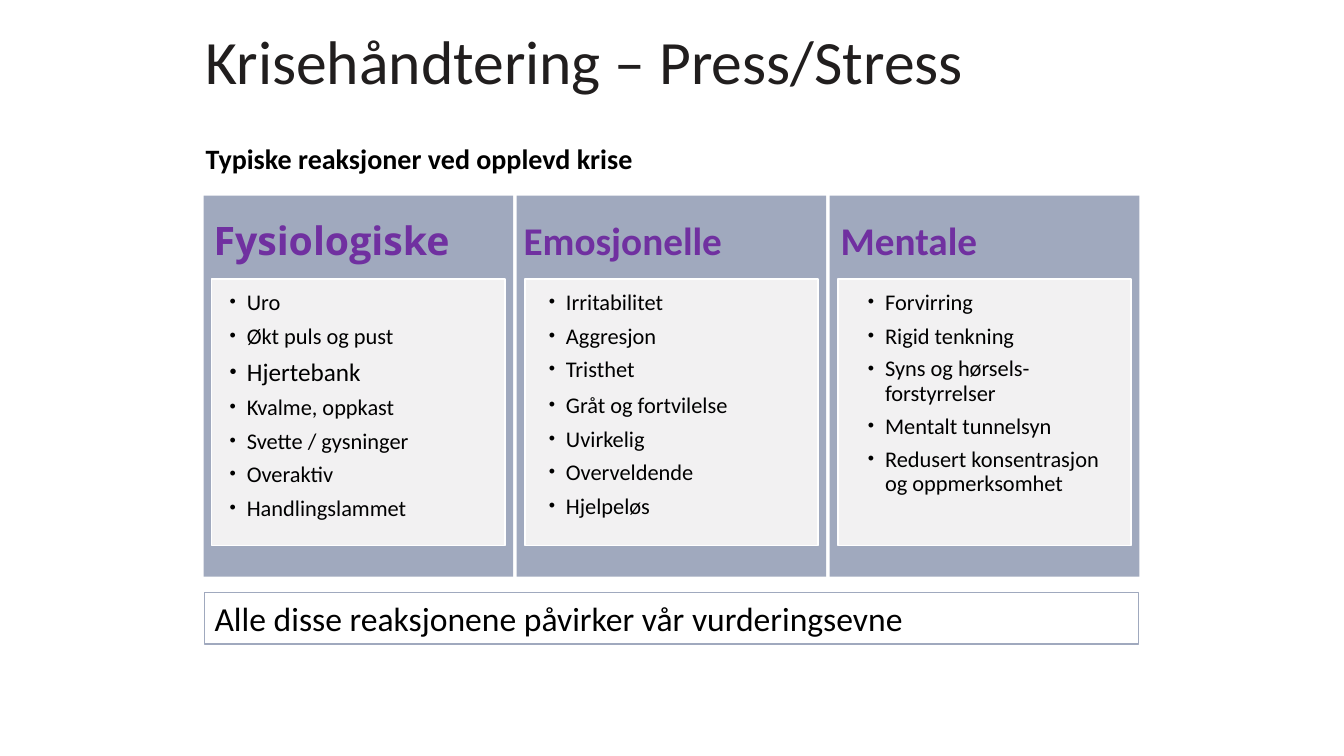
from lxml import etree
from pptx import Presentation
from pptx.dml.color import RGBColor
from pptx.enum.shapes import MSO_SHAPE
from pptx.enum.text import MSO_ANCHOR, PP_ALIGN
from pptx.oxml.ns import qn
from pptx.util import Inches, Pt

RECTANGLE = MSO_SHAPE.RECTANGLE
TOP, MIDDLE = MSO_ANCHOR.TOP, MSO_ANCHOR.MIDDLE
LEFT = PP_ALIGN.LEFT

COLORS = {
    "title": "211E1E",
    "text": "000000",
    "heading": "7030A0",
    "panel": "A0A9BE",
    "card": "F2F1F2",
    "white": "FFFFFF",
}
BODY_FONT = "Calibri"
COLUMNS_LEFT, COLUMNS_TOP = 2.02, 1.94
COLUMN_WIDTH, COLUMN_HEIGHT, COLUMN_PITCH = 3.07, 3.78, 3.105

REACTIONS = [
    {
        "heading": "Fysiologiske", "font": "Open Sans",
        "heading_shift": 0, "list_shift": 0.16, "list_width": 2.81,
        "items": [("Uro", 16, 0, 1), ("Økt puls og pust", 16, 0.3, 1),
                  ("Hjertebank", 18, 0.3, 1), ("Kvalme, oppkast", 16, 0.3, 1),
                  ("Svette / gysninger", 16, 0.3, 1), ("Overaktiv", 16, 0.3, 1),
                  ("Handlingslammet", 16, 0.3, 1)],
    },
    {
        "heading": "Emosjonelle", "font": BODY_FONT,
        "heading_shift": -0.03, "list_shift": 0.22, "list_width": 2.75,
        "items": [("Irritabilitet", 16, 0, 1), ("Aggresjon", 16, 0.3, 1),
                  ("Tristhet", 16, 0.3, 1), ("Gråt og fortvilelse", 16, 0.4, 1),
                  ("Uvirkelig", 16, 0.3, 1), ("Overveldende", 16, 0.3, 1),
                  ("Hjelpeløs", 16, 0.3, 1)],
    },
    {
        "heading": "Mentale", "font": BODY_FONT,
        "heading_shift": 0.01, "list_shift": 0.28, "list_width": 2.81,
        "items": [("Forvirring", 16, 0, 1), ("Rigid tenkning", 16, 0.3, 1),
                  ("Syns og hørsels-forstyrrelser", 16, 0.4, 0.9),
                  ("Mentalt tunnelsyn", 16, 0.4, 0.9),
                  ("Redusert konsentrasjon \nog oppmerksomhet", 16, 0.4, 0.9)],
    },
]


def add_text(paragraph, text, size, color, font=BODY_FONT, bold=False):
    paragraph.alignment = LEFT
    for index, line in enumerate(text.split("\n")):
        if index:
            paragraph.add_line_break()
        run = paragraph.add_run()
        run.text = line
        run.font.name = font
        run.font.size = Pt(size)
        run.font.bold = bold
        run.font.color.rgb = RGBColor.from_string(COLORS[color])


def add_text_box(slide, box, anchor=TOP, wrap=True):
    frame = slide.shapes.add_textbox(*map(Inches, box)).text_frame
    frame.word_wrap = wrap
    frame.vertical_anchor = anchor
    return frame


def add_rectangle(slide, box, fill, line=None):
    shape = slide.shapes.add_shape(RECTANGLE, *map(Inches, box))
    shape.shadow.inherit = False
    shape.fill.solid()
    shape.fill.fore_color.rgb = RGBColor.from_string(COLORS[fill])
    if line:
        shape.line.color.rgb = RGBColor.from_string(COLORS[line])
        shape.line.width = Pt(1)
    else:
        shape.line.fill.background()
    return shape


def add_bullet(paragraph):
    properties = paragraph._p.get_or_add_pPr()
    indent = Inches(0.17)
    properties.set("marL", str(indent))
    properties.set("indent", str(-indent))
    etree.SubElement(properties, qn("a:buSzPct")).set("val", "80000")
    etree.SubElement(properties, qn("a:buFont")).set("typeface", "Arial")
    etree.SubElement(properties, qn("a:buChar")).set("char", "•")


def add_header(slide, left, top, width):
    title = add_text_box(slide, (left, top, width, 0.73), MIDDLE)
    title.paragraphs[0].line_spacing = 0.9
    add_text(title.paragraphs[0], "Krisehåndtering – Press/Stress", 44, "title")
    subtitle = add_text_box(slide, (left, top + 1.07, 4.48, 0.44), wrap=False)
    add_text(subtitle.paragraphs[0], "Typiske reaksjoner ved opplevd krise",
             20, "text", bold=True)


def add_reaction_column(slide, left, top, width, height, reaction):
    add_rectangle(slide, (left, top, width, height), "panel")
    add_rectangle(slide, (left + 0.08, top + 0.83, width - 0.16, height - 1.14),
                  "card", "white")
    frame = add_text_box(slide, (left + reaction["list_shift"], top + 0.87,
                                 reaction["list_width"], height - 1.18))
    for index, (text, size, gap, spacing) in enumerate(reaction["items"]):
        paragraph = frame.add_paragraph() if index else frame.paragraphs[0]
        paragraph.space_before = Pt(gap * size)
        paragraph.line_spacing = spacing
        add_bullet(paragraph)
        add_text(paragraph, text, size, "text")
    heading = add_text_box(slide, (left + reaction["heading_shift"], top + 0.16,
                                   width, 0.57))
    add_text(heading.paragraphs[0], reaction["heading"], 28, "heading",
             reaction["font"], True)


def add_conclusion(slide, left, top, width, height):
    frame = add_rectangle(slide, (left, top, width, height), "white", "panel").text_frame
    frame.word_wrap = True
    frame.vertical_anchor = TOP
    add_text(frame.paragraphs[0],
             "Alle disse reaksjonene påvirker vår vurderingsevne", 24, "text")


def main():
    presentation = Presentation()
    presentation.slide_width = Inches(13.33)
    presentation.slide_height = Inches(7.5)
    slide = presentation.slides.add_slide(presentation.slide_layouts[6])
    add_header(slide, 1.94, 0.28, 9.45)
    for index, reaction in enumerate(REACTIONS):
        add_reaction_column(slide, COLUMNS_LEFT + index * COLUMN_PITCH, COLUMNS_TOP,
                            COLUMN_WIDTH, COLUMN_HEIGHT, reaction)
    add_conclusion(slide, 2.03, 5.88, 9.26, 0.51)
    presentation.save("out.pptx")


if __name__ == "__main__":
    main()
